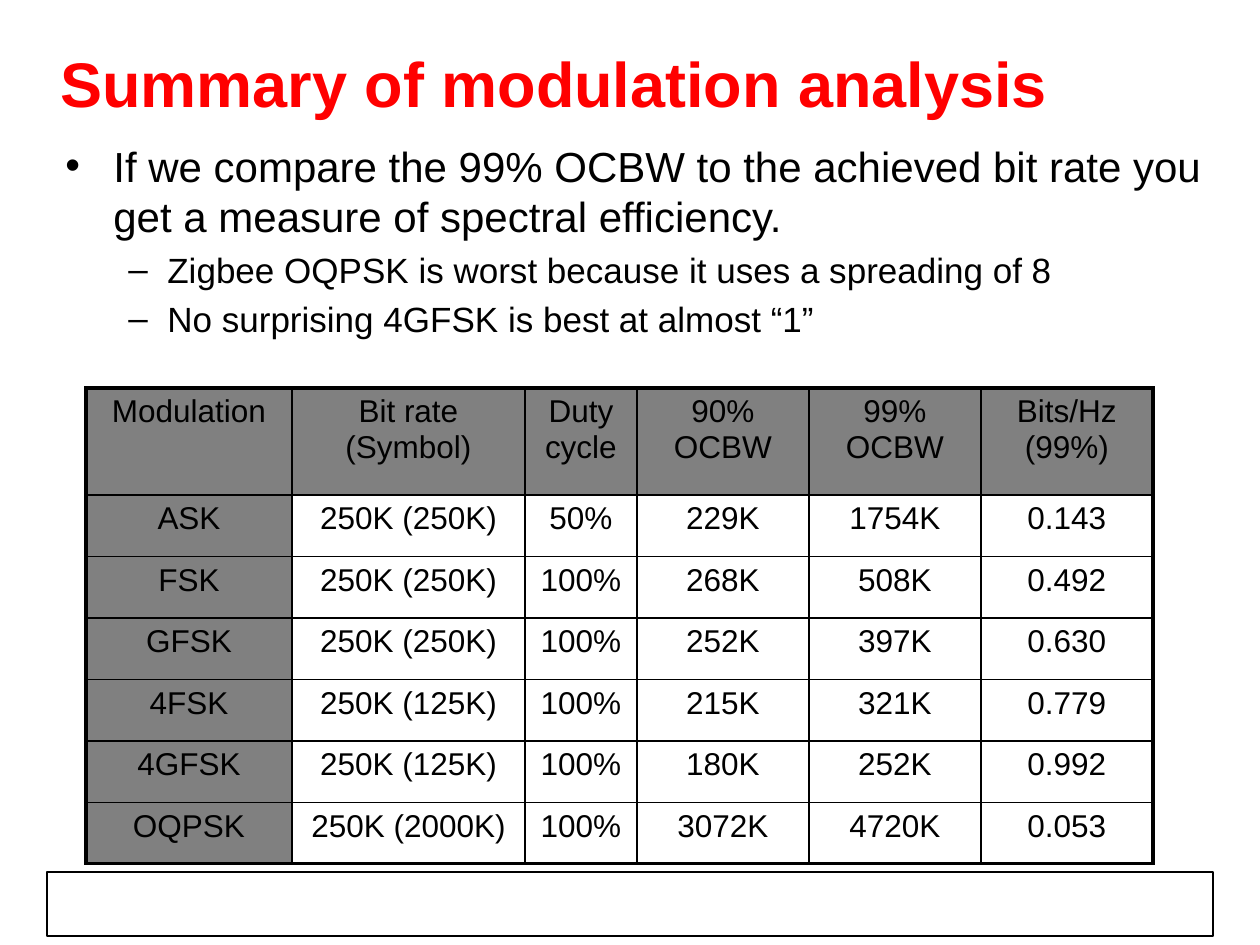
from lxml.etree import SubElement
from pptx import Presentation
from pptx.dml.color import RGBColor as RGB
from pptx.enum.shapes import MSO_SHAPE as SHAPE
from pptx.enum.text import MSO_ANCHOR as ANCHOR, PP_ALIGN as ALIGN
from pptx.oxml.ns import qn
from pptx.util import Pt

# Content
TITLE = "Summary of modulation analysis"
POINTS = [
    (0, "If we compare the 99% OCBW to the achieved bit rate you get a measure "
        "of spectral efficiency."),
    (1, "Zigbee OQPSK is worst because it uses a spreading of 8"),
    (1, "No surprising 4GFSK is best at almost “1”"),
]
ROWS = [
    ("Modulation", "Bit rate\n(Symbol)", "Duty cycle", "90% OCBW", "99% OCBW",
     "Bits/Hz (99%)"),
    ("ASK", "250K (250K)", "50%", "229K", "1754K", "0.143"),
    ("FSK", "250K (250K)", "100%", "268K", "508K", "0.492"),
    ("GFSK", "250K (250K)", "100%", "252K", "397K", "0.630"),
    ("4FSK", "250K (125K)", "100%", "215K", "321K", "0.779"),
    ("4GFSK", "250K (125K)", "100%", "180K", "252K", "0.992"),
    ("OQPSK", "250K (2000K)", "100%", "3072K", "4720K", "0.053"),
]

# Theme and layout, lengths in px
THEME = {
    "font": "Arial", "title": "FF0000", "ink": "000000", "head": "808080",
    "title_size": 36, "point_sizes": (24, 20), "cell_size": 18,
    "thin": 1, "thick": 2.25, "frame": 0.75,
}
PX = 914400 / 126
PAGE = (1260, 945)
TITLE_BOX = (48, 0, 1165, 164)
BODY_BOX = (53, 134, 1167, 268)
FOOT_BOX = (47, 872, 1166, 64)
TABLE_BOX = (86, 388, 1067, 476)
COLS = (206, 233, 112, 172, 172, 172)
HEAD_H = 107
LEVELS = [("•", 48, -48), ("–", 102, -39)]  # mark, margin, indent


def emu(n):
    return round(n * PX)


def box(dims):
    return [emu(n) for n in dims]


def write(para, text, size, color="ink", bold=False):
    for i, line in enumerate(text.split("\n")):
        if i:
            para.add_line_break()
        run = para.add_run()
        run.text = line
        font = run.font
        font.name, font.size, font.bold = THEME["font"], Pt(size), bold
        font.color.rgb = RGB.from_string(THEME[color])


def text_box(slide, dims):
    frame = slide.shapes.add_textbox(*box(dims)).text_frame
    frame.word_wrap = True
    return frame


def bullet(para, level):
    mark, left, hang = LEVELS[level]
    props = para._p.get_or_add_pPr()
    props.set("marL", str(emu(left)))
    props.set("indent", str(emu(hang)))
    SubElement(props, qn("a:buFont")).set("typeface", THEME["font"])
    SubElement(props, qn("a:buChar")).set("char", mark)


def edge(cell, side, width):
    line = SubElement(cell._tc.get_or_add_tcPr(), qn("a:ln" + side),
                      w=str(Pt(width)))
    fill = SubElement(line, qn("a:solidFill"))
    SubElement(fill, qn("a:srgbClr"), val=THEME["ink"])


def add_grid(slide):
    table = slide.shapes.add_table(len(ROWS), len(COLS), *box(TABLE_BOX)).table
    for col, width in zip(table.columns, COLS):
        col.width = emu(width)
    row_h = (TABLE_BOX[3] - HEAD_H) / (len(ROWS) - 1)
    for r, row in enumerate(ROWS):
        table.rows[r].height = emu(row_h if r else HEAD_H)
        for c, text in enumerate(row):
            cell = table.cell(r, c)
            outer = {"L": c == 0, "R": c == len(COLS) - 1,
                     "T": r == 0, "B": r == len(ROWS) - 1}
            for side, thick in outer.items():
                edge(cell, side, THEME["thick" if thick else "thin"])
            if r == 0 or c == 0:
                cell.fill.solid()
                cell.fill.fore_color.rgb = RGB.from_string(THEME["head"])
            else:
                cell.fill.background()
            para = cell.text_frame.paragraphs[0]
            para.alignment = ALIGN.CENTER
            write(para, text, THEME["cell_size"])


def main():
    deck = Presentation()
    deck.slide_width, deck.slide_height = box(PAGE)
    slide = deck.slides.add_slide(deck.slide_layouts[6])

    # Footer frame
    foot = slide.shapes.add_shape(SHAPE.RECTANGLE, *box(FOOT_BOX))
    foot.shadow.inherit = False
    foot.fill.background()
    foot.line.color.rgb = RGB.from_string(THEME["ink"])
    foot.line.width = Pt(THEME["frame"])

    # Title
    head = text_box(slide, TITLE_BOX)
    head.vertical_anchor = ANCHOR.MIDDLE
    write(head.paragraphs[0], TITLE, THEME["title_size"], "title", True)

    # Bullet points
    body = text_box(slide, BODY_BOX)
    for i, (level, text) in enumerate(POINTS):
        para = body.add_paragraph() if i else body.paragraphs[0]
        size = THEME["point_sizes"][level]
        para.level = level
        para.space_before = Pt(size * 0.2 if i else 0)
        bullet(para, level)
        write(para, text, size)

    # Results table
    add_grid(slide)
    deck.save("out.pptx")


if __name__ == "__main__":
    main()
